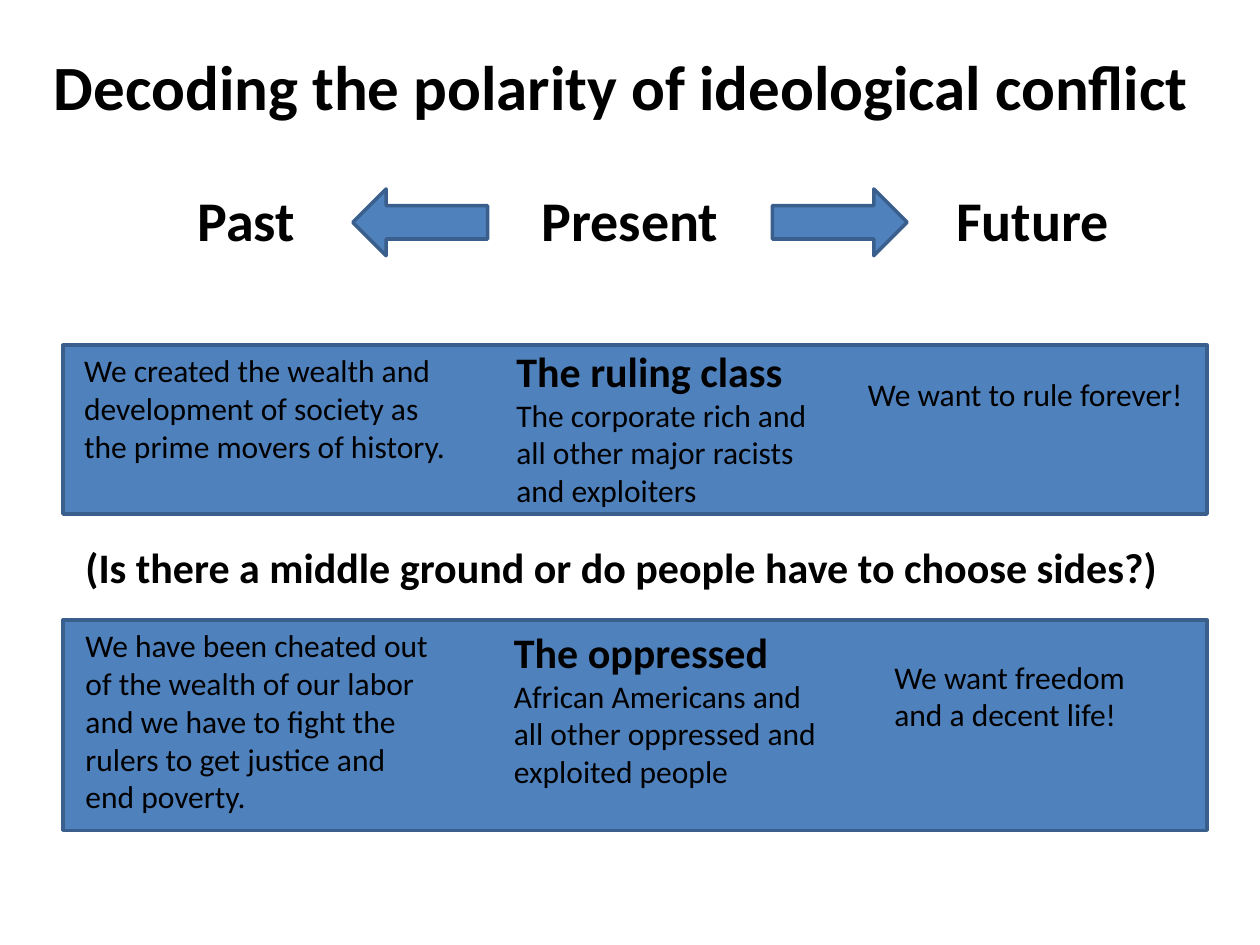
from pptx import Presentation
from pptx.dml.color import RGBColor
from pptx.enum.shapes import MSO_SHAPE
from pptx.enum.text import MSO_AUTO_SIZE
from pptx.util import Emu, Pt

RECTANGLE = MSO_SHAPE.RECTANGLE
LEFT_ARROW = MSO_SHAPE.LEFT_ARROW
RIGHT_ARROW = MSO_SHAPE.RIGHT_ARROW
GROW_TO_TEXT = MSO_AUTO_SIZE.SHAPE_TO_FIT_TEXT

BLUE = RGBColor(0x4F, 0x81, 0xBD)
DARK_BLUE = RGBColor(0x3A, 0x5F, 0x8C)
BLACK = RGBColor(0, 0, 0)
FONT = "Calibri"
PX_PER_INCH = 100
EMU_PER_PX = 914400 // PX_PER_INCH


def px(length):
    """Turn px into EMU."""
    return Emu(length * EMU_PER_PX)


def add_block(slide, kind, left, top, width, height):
    """Add a blue outlined preset shape."""
    block = slide.shapes.add_shape(kind, px(left), px(top), px(width), px(height))
    block.shadow.inherit = False
    block.fill.solid()
    block.fill.fore_color.rgb = BLUE
    block.line.color.rgb = DARK_BLUE
    block.line.width = Pt(2)


def add_words(slide, box, lines, size=18, heading_size=None):
    """Add one paragraph per line, the first one bold if it has a heading size."""
    words = slide.shapes.add_textbox(*map(px, box))
    frame = words.text_frame
    frame.word_wrap = False
    frame.auto_size = GROW_TO_TEXT
    for index, line in enumerate(lines):
        paragraph = frame.paragraphs[0] if index == 0 else frame.add_paragraph()
        run = paragraph.add_run()
        run.text = line
        is_heading = index == 0 and heading_size is not None
        run.font.name = FONT
        run.font.size = Pt(heading_size if is_heading else size)
        run.font.bold = is_heading
        run.font.color.rgb = BLACK


def add_banner(slide, box, sentence, size):
    """Add a bold one-line statement."""
    add_words(slide, box, [sentence], heading_size=size)


def add_timeline(slide, left, top):
    """Add the three eras with arrows leading out from the present."""
    for era, offset, width in (("Past", 0, 98), ("Present", 273, 162), ("Future", 602, 143)):
        add_banner(slide, (left + offset, top, width, 64), era, 32)
    for arrow, offset in ((LEFT_ARROW, 133), (RIGHT_ARROW, 466)):
        add_block(slide, arrow, left + offset, top + 8, 107, 53)


def add_class_panel(slide, box, past, present, future):
    """Add a panel with a class's view of the past, its name and its aim."""
    left, top, width, height = box
    add_block(slide, RECTANGLE, *box)
    for (dx, dy, w, h, lines), heading_size in ((past, None), (present, 24), (future, None)):
        add_words(slide, (left + dx, top + dy, w, h), lines, heading_size=heading_size)


def main():
    """Build and save the slide."""
    deck = Presentation()
    deck.slide_width, deck.slide_height = px(1000), px(750)
    slide = deck.slides.add_slide(deck.slide_layouts[6])

    add_banner(slide, (33, 33, 931, 71), "Decoding the polarity of ideological conflict", 36)
    add_timeline(slide, 147, 142)
    add_class_panel(
        slide, (50, 274, 908, 134),
        past=(7, 0, 310, 101, ["We created the wealth and", "development of society as",
                               "the prime movers of history."]),
        present=(350, -5, 267, 141, ["The ruling class", "The corporate rich and",
                                     "all other major racists", "and exploiters"]),
        future=(629, 19, 279, 40, ["We want to rule forever!"]),
    )
    add_banner(slide, (58, 425, 879, 50),
               "(Is there a middle ground or do people have to choose sides?)", 24)
    add_class_panel(
        slide, (50, 492, 908, 167),
        past=(8, 0, 302, 162, ["We have been cheated out", "of the wealth of our labor",
                               "and we have to fight the", "rulers to get justice and",
                               "end poverty."]),
        present=(348, 0, 269, 141, ["The oppressed", "African Americans and",
                                    "all other oppressed and", "exploited people"]),
        future=(650, 25, 211, 71, ["We want freedom", "and a decent life!"]),
    )
    deck.save("out.pptx")


if __name__ == "__main__":
    main()
